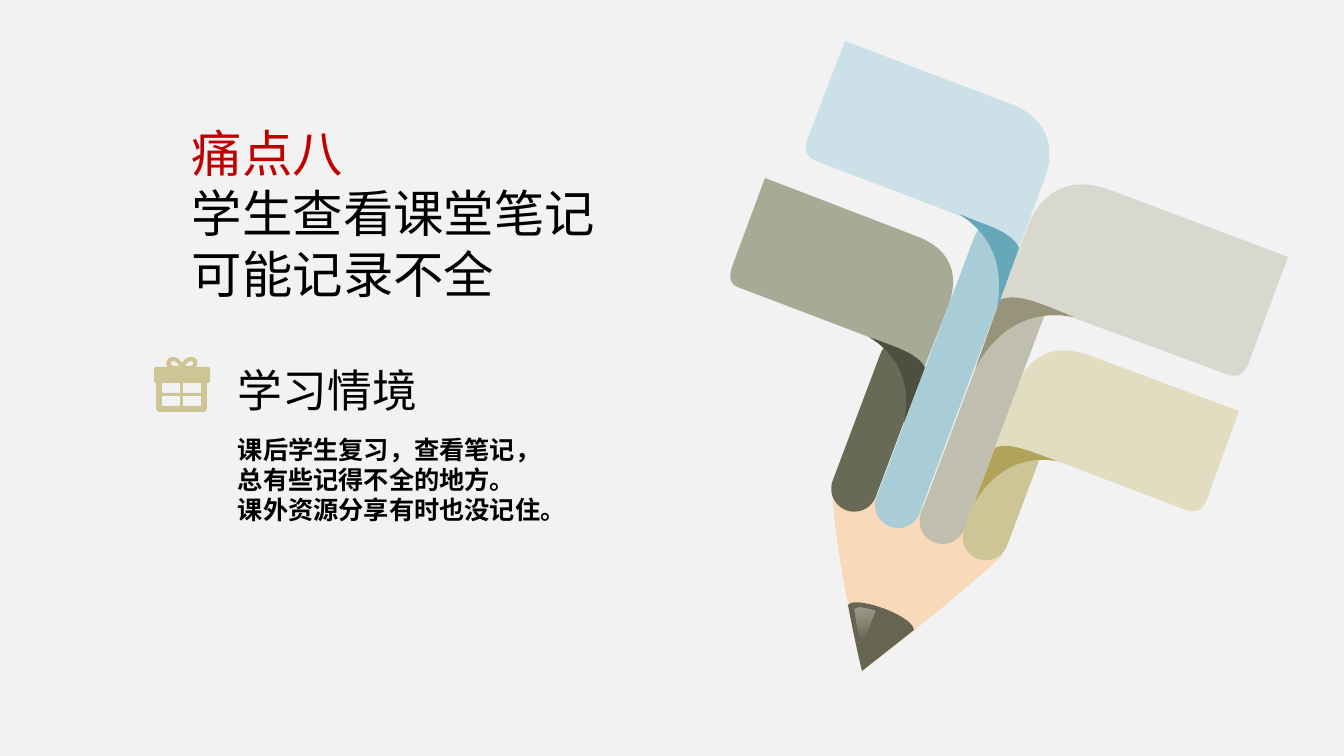
from math import cos, radians, sin

from lxml.etree import SubElement
from pptx import Presentation
from pptx.dml.color import RGBColor
from pptx.enum.shapes import MSO_SHAPE
from pptx.enum.text import MSO_ANCHOR, MSO_AUTO_SIZE, PP_ALIGN
from pptx.oxml.ns import qn
from pptx.util import Pt

EMU_PER_PX = 914400 / 100.8
TILT = 20.6
CURVE_STEPS = 12
COLOURS = {
    "background": "F2F2F2", "black": "000000", "red": "C00000",
    "wood": "F8DABA", "lead": "676451", "shine": "F2F2EF",
    "gold": "CEC597", "gold flag": "E2DCC1", "gold fold": "B1A35A",
    "grey": "C0BEAF", "grey flag": "D9D8CF", "grey fold": "98947C",
    "olive": "676A55", "olive flag": "A7AA95", "olive fold": "4D5040",
    "blue": "A8CDD7", "blue flag": "CBE1E7", "blue fold": "66A7B9",
}

# Contours: a pair is a line to that point, six numbers are a Bézier curve
WOOD = [(1003, 555), (952, 603, 862, 671, 862, 671),
        (862, 671, 834, 551, 832, 489), (832, 489, 959, 496, 1003, 555)]
LEAD = [(848, 605), (855, 642, 862, 671, 862, 671),
        (862, 671, 885, 653, 914, 630), (913, 615, 854, 595, 848, 605)]
SHINE = [(862, 647), (862, 647, 858, 633, 855, 610), (857, 606, 866, 608, 875, 611)]

# Ribbons from back to front: colour, stem box, flag contour, fold contour
RIBBONS = [
    ("gold", (978, 430, 46, 133),
     [(1088, 355), (1052, 342, 1028, 358, 1018, 385), (984, 477),
      (993, 465, 1022, 448, 1057, 461), (1186, 510),
      (1195, 513, 1202, 511, 1207, 499), (1239, 411)],
     [(995, 448), (974, 504), (987, 481, 1012, 454, 1057, 461), (1038, 454),
      (1026, 450, 1006, 442, 995, 448)]),
    ("grey", (964, 254, 46, 298),
     [(1110, 190), (1068, 174, 1040, 194, 1028, 226), (987, 336),
      (997, 322, 1032, 301, 1074, 318), (1226, 374),
      (1237, 378, 1244, 376, 1249, 362), (1288, 257)],
     [(1000, 300), (976, 367), (991, 340, 1020, 307, 1074, 317), (1052, 308),
      (1036, 302, 1014, 293, 1000, 300)]),
    ("olive", (855, 335, 46, 181),
     [(916, 236), (952, 249, 959, 276, 949, 304), (913, 396),
      (915, 382, 904, 350, 869, 337), (740, 288),
      (731, 285, 728, 279, 732, 267), (765, 178)],
     [(925, 368), (904, 423), (909, 398, 909, 361, 869, 337), (888, 344),
      (901, 349, 920, 356, 925, 368)]),
    ("blue", (924, 213, 46, 324),
     [(1011, 104), (1048, 118, 1056, 148, 1045, 178), (1007, 280),
      (1009, 264, 997, 229, 958, 215), (816, 161),
      (807, 157, 803, 151, 808, 138), (845, 41)],
     [(1019, 248), (997, 309), (1002, 281, 1002, 241, 959, 214), (979, 222),
      (993, 227, 1014, 235, 1019, 248)]),
]

GIFT_BOX = [(173, 357), (177, 357, 180, 360, 182, 363), (184, 360, 187, 357, 191, 357),
            (197, 357, 199, 363, 196, 367), (208, 367), (209, 367, 210, 368, 210, 369),
            (210, 381), (210, 382, 209, 383, 207, 383), (207, 408),
            (207, 410, 205, 412, 203, 412), (160, 412), (158, 412, 156, 410, 156, 408),
            (156, 383), (155, 383, 154, 382, 154, 381), (154, 369),
            (154, 368, 155, 367, 156, 367), (167, 367), (165, 363, 167, 357, 173, 357)]
BOW_LOOPS = [[(centre + side * 3, 366), (centre + side * 5, 362, centre + side * 8, 361,
                                        centre + side * 9, 361),
              (centre + side * 12, 361, centre + side * 12, 366, centre + side * 8, 366)]
             for centre, side in ((182, -1), (182, 1))]
WINDOWS = [[(left, top), (left + 18, top), (left + 18, top + 10), (left, top + 10)]
           for left in (162, 183) for top in (383, 396)]


def px(length):
    return round(length * EMU_PER_PX)


def colour(name):
    return RGBColor.from_string(COLOURS[name])


def turn(point, degrees):
    x, y = point
    cosine, sine = cos(radians(degrees)), sin(radians(degrees))
    return x * cosine - y * sine, x * sine + y * cosine


def flatten(contour):
    """Turn lines and Bézier curves into a list of points."""
    points = [contour[0]]
    for segment in contour[1:]:
        if len(segment) == 2:
            points.append(segment)
            continue
        controls = [points[-1], segment[:2], segment[2:4], segment[4:]]
        for step in range(1, CURVE_STEPS + 1):
            t = step / CURVE_STEPS
            weights = ((1 - t) ** 3, 3 * t * (1 - t) ** 2, 3 * t * t * (1 - t), t ** 3)
            points.append(tuple(sum(weight * control[axis] for weight, control
                                    in zip(weights, controls)) for axis in (0, 1)))
    return points


def write(paragraph, text, *, size, font, color="black", bold=False):
    paragraph.alignment = PP_ALIGN.LEFT
    run = paragraph.add_run()
    run.text = text
    run.font.size = Pt(size)
    run.font.name = font
    run.font.bold = bold
    run.font.color.rgb = colour(color)


class SlideBuilder:
    heading_font = "Open Sans"
    body_font = "Lato"

    def __init__(self, slide):
        self.slide = slide
        slide.background.fill.solid()
        slide.background.fill.fore_color.rgb = colour("background")

    def paint(self, shape, color):
        shape.shadow.inherit = False
        shape.fill.solid()
        shape.fill.fore_color.rgb = colour(color)
        shape.line.fill.background()
        return shape

    def outline(self, contours, color, tilt=0):
        """Draw contours upright, then turn the shape into place."""
        upright = [[turn(point, -tilt) for point in flatten(contour)] for contour in contours]
        outlines = [[(px(x), px(y)) for x, y in points] for points in upright]
        builder = self.slide.shapes.build_freeform(*outlines[0][0], scale=1.0)
        for index, points in enumerate(outlines):
            if index:
                builder.move_to(*points[0])
            builder.add_line_segments(points[1:], close=True)
        shape = builder.convert_to_shape()
        centre = shape.left + shape.width / 2, shape.top + shape.height / 2
        x, y = turn(centre, tilt)
        shape.left, shape.top = round(x - shape.width / 2), round(y - shape.height / 2)
        shape.rotation = tilt
        return self.paint(shape, color)

    def stem(self, box, color):
        shape = self.slide.shapes.add_shape(MSO_SHAPE.ROUNDED_RECTANGLE, *map(px, box))
        shape.adjustments[0] = 0.5
        shape.rotation = TILT
        return self.paint(shape, color)

    def fade(self, shape, stops, angle):
        shape.fill.gradient()
        shape.fill.gradient_angle = angle
        for stop, (position, color, opacity) in zip(shape.fill.gradient_stops, stops):
            stop.position = position
            stop.color.rgb = colour(color)
        values = shape.fill._xPr.iter(qn("a:srgbClr"))
        for value, (position, color, opacity) in zip(values, stops):
            SubElement(value, qn("a:alpha")).set("val", str(opacity * 1000))

    def text(self, box, lines, shape=None, **style):
        shape = shape or self.slide.shapes.add_textbox(*map(px, box))
        shape.left, shape.top, shape.width, shape.height = map(px, box)
        frame = shape.text_frame
        frame.word_wrap = True
        frame.auto_size = MSO_AUTO_SIZE.SHAPE_TO_FIT_TEXT
        frame.vertical_anchor = MSO_ANCHOR.TOP
        frame.margin_left = frame.margin_right = frame.margin_top = frame.margin_bottom = 0
        for index, (line, color) in enumerate(lines):
            paragraph = frame.add_paragraph() if index else frame.paragraphs[0]
            write(paragraph, line, color=color, **style)


def main():
    presentation = Presentation()
    presentation.slide_width, presentation.slide_height = px(1344), px(756)
    slide = presentation.slides.add_slide(presentation.slide_layouts[5])
    builder = SlideBuilder(slide)

    # Pencil tip
    builder.outline([WOOD], "wood", TILT)
    builder.outline([LEAD], "lead", TILT)
    shine = builder.outline([SHINE], "shine", TILT)
    builder.fade(shine, [(0.22, "shine", 0), (1, "grey", 64)], angle=120)

    # Ribbons
    for name, stem_box, flag, fold in RIBBONS:
        builder.stem(stem_box, name)
        builder.outline([flag], f"{name} flag", TILT)
        builder.outline([fold], f"{name} fold", TILT)

    # Gift icon
    builder.outline([GIFT_BOX, *BOW_LOOPS, *WINDOWS], "gold")

    # Texts
    builder.text((192, 122, 435, 183),
                 [("痛点八", "red"), ("学生查看课堂笔记可能记录不全", "black")],
                 shape=slide.shapes.title, size=36, font=builder.heading_font)
    builder.text((238, 434, 325, 92),
                 [("课后学生复习，查看笔记，总有些记得不全的地方。", "black"),
                  ("课外资源分享有时也没记住。", "black")],
                 size=18, font=builder.body_font, bold=True)
    builder.text((238, 363, 224, 54), [("学习情境", "black")],
                 size=32, font=builder.heading_font)

    presentation.save("out.pptx")


if __name__ == "__main__":
    main()
